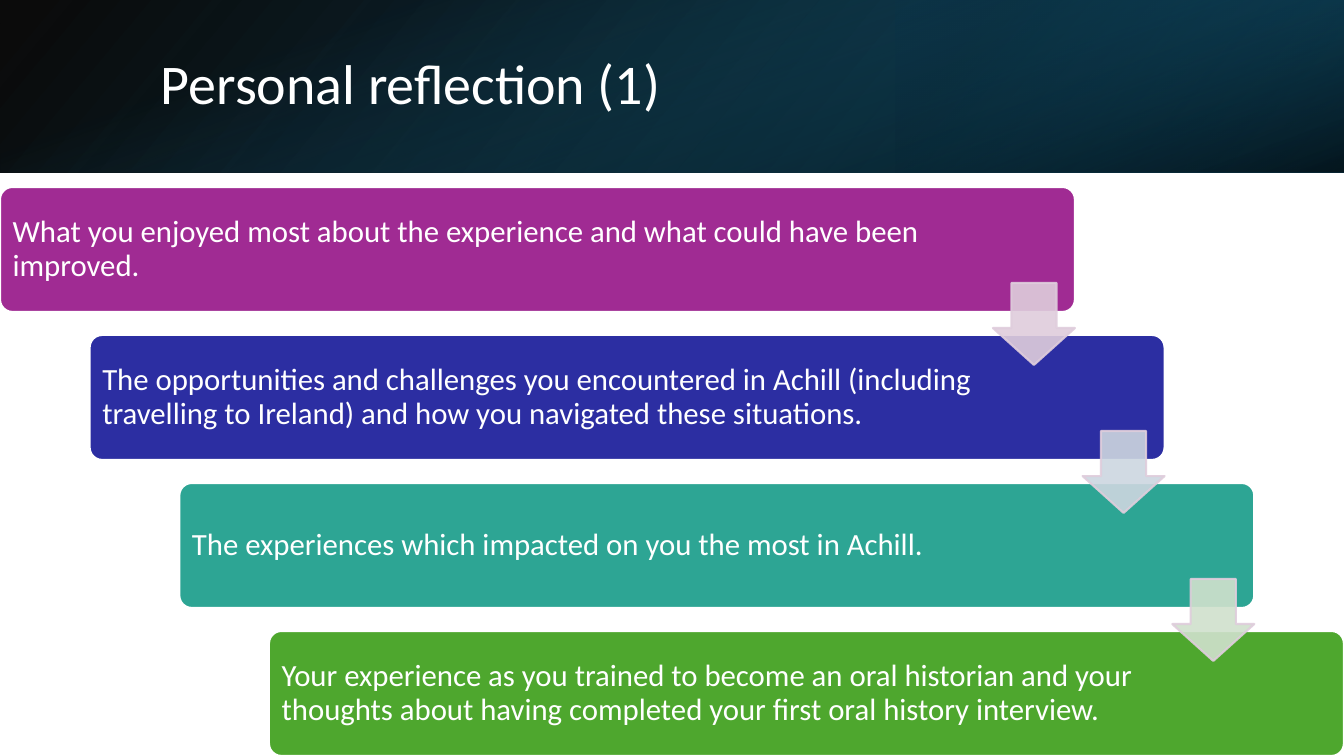
"""Build the personal reflection slide: a title band above four stepped cards."""
from lxml.etree import SubElement
from pptx import Presentation
from pptx.dml.color import RGBColor
from pptx.enum.shapes import MSO_SHAPE as Shape
from pptx.enum.text import MSO_ANCHOR as Anchor, PP_ALIGN as Align
from pptx.oxml import parse_xml
from pptx.oxml.ns import nsdecls, qn
from pptx.util import Emu, Pt

TITLE = "Personal reflection (1)"
CARDS = [
    ("What you enjoyed most about the experience and what could have been improved.", "A02B93"),
    ("The opportunities and challenges you encountered in Achill (including travelling to Ireland) "
     "and how you navigated these situations.", "2C2EA2"),
    ("The experiences which impacted on you the most in Achill.", "2DA594"),
    ("Your experience as you trained to become an oral historian and your thoughts about having "
     "completed your first oral history interview.", "4EA72E"),
]
ARROW_FILLS = ["DFCDDC", "CDD6E0", "D0E1CD"]
THEME = {
    "font": "Calibri", "title_size": 40, "card_size": 22, "line_width": 1.5,
    "text": "FFFFFF", "card_line": "FFFFFF", "arrow_line": "DFCDDC", "arrow_alpha": 90,
}

SLIDE_WIDTH, SLIDE_HEIGHT, BAND_HEIGHT = 1344, 756, 173
TITLE_BOX = (151, 38, 1107, 97)
CARD_WIDTH, CARD_HEIGHT, CARDS_TOP = 1075, 125, 187
ARROW_SIZE, ARROW_DROP = 82, 96
CARD_INSETS = {"margin_left": 9, "margin_right": 147, "margin_top": 9, "margin_bottom": 9}

BAND_LAYERS = [
    {"box": (0, 0, SLIDE_WIDTH, BAND_HEIGHT), "rotation": 0, "flip": True, "angle": 140,
     "stops": [(0, "000000", 96), (100, "104862", 100)]},
    {"box": (896, 0, 448, BAND_HEIGHT), "rotation": 180, "flip": True, "angle": 320,
     "stops": [(19, "0B3041", 68), (100, "156082", 79)]},
    {"box": ((SLIDE_WIDTH - BAND_HEIGHT) / 2, (BAND_HEIGHT - SLIDE_WIDTH) / 2,
             BAND_HEIGHT, SLIDE_WIDTH), "rotation": 90, "flip": False, "angle": 340,
     "stops": [(23, "156082", 0), (99, "000000", 74)]},
]


def px(length):
    return Emu(round(length * 914400 / 100.8))


def set_all(target, values):
    for name, value in values.items():
        setattr(target, name, value)


def add_shape(slide, kind, box, adjustments=()):
    shape = slide.shapes.add_shape(kind, *map(px, box))
    shape.shadow.inherit = False
    for index, value in enumerate(adjustments):
        shape.adjustments[index] = value
    return shape


def paint(shape, fill, line):
    shape.fill.solid()
    shape.fill.fore_color.rgb = RGBColor.from_string(fill)
    shape.line.color.rgb = RGBColor.from_string(line)
    shape.line.width = Pt(THEME["line_width"])


def write(shape, text, size):
    frame = shape.text_frame
    set_all(frame, {"word_wrap": True, "vertical_anchor": Anchor.MIDDLE})
    paragraph = frame.paragraphs[0]
    set_all(paragraph, {"text": text, "alignment": Align.LEFT, "line_spacing": 0.9})
    font = paragraph.runs[0].font
    set_all(font, {"name": THEME["font"], "size": Pt(size)})
    font.color.rgb = RGBColor.from_string(THEME["text"])


def add_band_layer(slide, layer):
    shape = add_shape(slide, Shape.RECTANGLE, layer["box"])
    shape.rotation = layer["rotation"]
    shape.line.fill.background()
    properties = shape._element.spPr
    if layer["flip"]:
        properties.xfrm.set("flipH", "1")
    stops = "".join(
        f'<a:gs pos="{position * 1000}"><a:srgbClr val="{color}">'
        f'<a:alpha val="{alpha * 1000}"/></a:srgbClr></a:gs>'
        for position, color, alpha in layer["stops"])
    gradient = parse_xml(
        f'<a:gradFill {nsdecls("a")}><a:gsLst>{stops}</a:gsLst>'
        f'<a:lin ang="{layer["angle"] * 60000}" scaled="0"/></a:gradFill>')
    properties.find(qn("a:prstGeom")).addnext(gradient)


def add_card(slide, left, top, text, color):
    card = add_shape(slide, Shape.ROUNDED_RECTANGLE, (left, top, CARD_WIDTH, CARD_HEIGHT), [0.1])
    paint(card, color, THEME["card_line"])
    set_all(card.text_frame, {side: px(inset) for side, inset in CARD_INSETS.items()})
    write(card, text, THEME["card_size"])


def add_arrow(slide, card_left, card_top, color):
    box = (card_left + CARD_WIDTH - ARROW_SIZE, card_top + ARROW_DROP, ARROW_SIZE, ARROW_SIZE)
    arrow = add_shape(slide, Shape.DOWN_ARROW, box, [0.55, 0.45])
    paint(arrow, color, THEME["arrow_line"])
    for shade in arrow._element.spPr.iter(qn("a:srgbClr")):
        SubElement(shade, qn("a:alpha"), val=str(THEME["arrow_alpha"] * 1000))


def main():
    presentation = Presentation()
    set_all(presentation, {"slide_width": px(SLIDE_WIDTH), "slide_height": px(SLIDE_HEIGHT)})
    slide = presentation.slides.add_slide(presentation.slide_layouts[6])
    for layer in BAND_LAYERS:
        add_band_layer(slide, layer)
    write(slide.shapes.add_textbox(*map(px, TITLE_BOX)), TITLE, THEME["title_size"])

    steps = len(CARDS) - 1
    step_x = (SLIDE_WIDTH - CARD_WIDTH) / steps
    step_y = (SLIDE_HEIGHT - CARD_HEIGHT - CARDS_TOP) / steps
    corners = [(index * step_x, CARDS_TOP + index * step_y) for index in range(len(CARDS))]
    for corner, (text, color) in zip(corners, CARDS):
        add_card(slide, *corner, text, color)
    for corner, color in zip(corners, ARROW_FILLS):
        add_arrow(slide, *corner, color)
    presentation.save("out.pptx")


if __name__ == "__main__":
    main()
